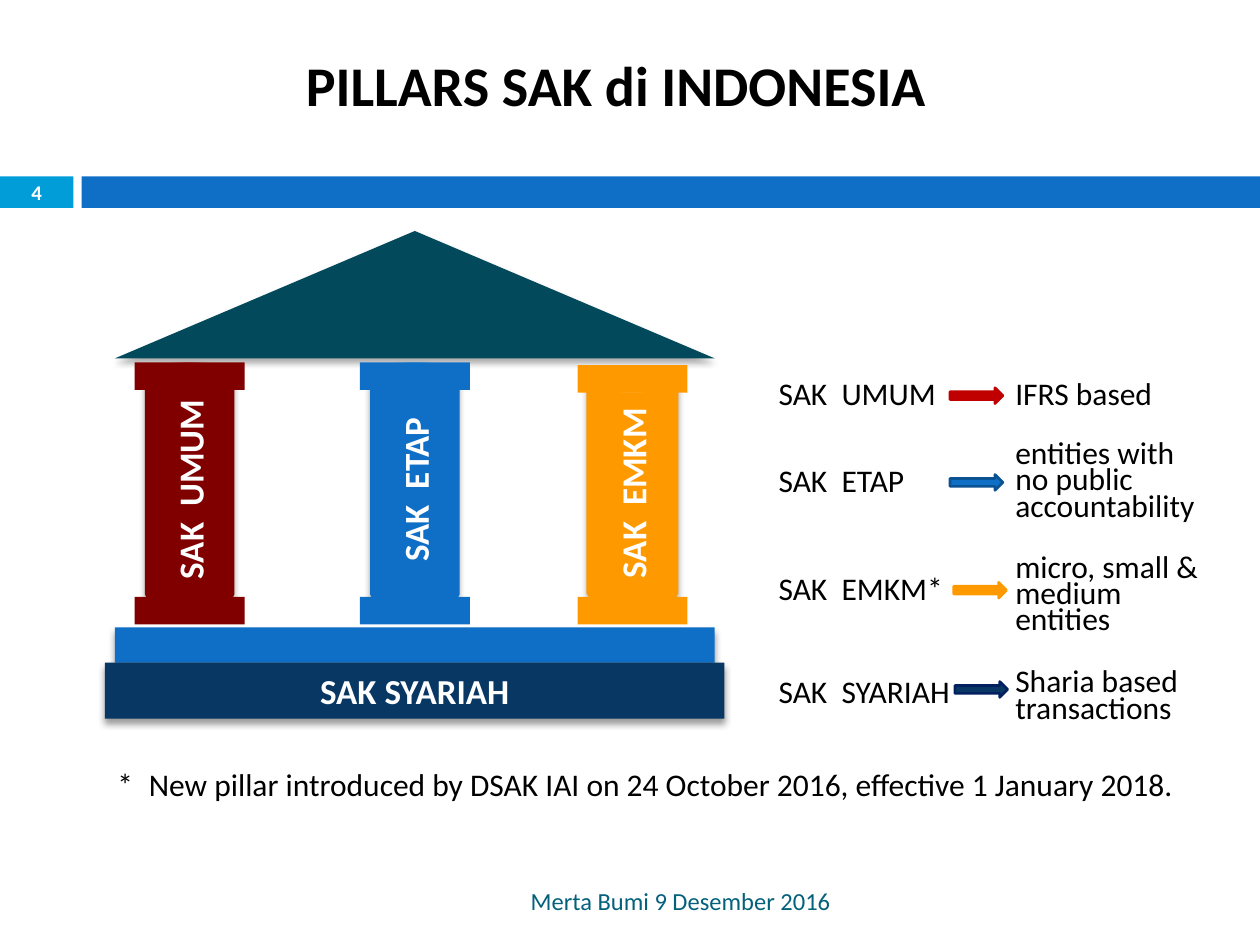
from lxml import etree
from pptx import Presentation
from pptx.dml.color import RGBColor
from pptx.enum.shapes import MSO_SHAPE
from pptx.enum.text import MSO_ANCHOR, PP_ALIGN
from pptx.oxml.ns import qn
from pptx.util import Pt

RECT, ROOF, CAN, ARROW = (MSO_SHAPE.RECTANGLE, MSO_SHAPE.ISOSCELES_TRIANGLE,
                          MSO_SHAPE.CAN, MSO_SHAPE.RIGHT_ARROW)
LEFT, CENTER, RIGHT = PP_ALIGN.LEFT, PP_ALIGN.CENTER, PP_ALIGN.RIGHT
TOP, MIDDLE = MSO_ANCHOR.TOP, MSO_ANCHOR.MIDDLE
BLACK, WHITE, BLUE, NAVY = "000000", "FFFFFF", "0F6FC6", "083763"
MAROON, ORANGE = "800000", "FF9900"
SOFT, DEEP = (32, 3.5, 2.2), (40, 4, 3)
CAP_W, CAP_H, SHAFT_W = 62.8, 15.8, 51.2

# name, left, top, bottom of shaft, colour
PILLARS = [
    ("SAK  UMUM", 77, 207, 346, MAROON),
    ("SAK  ETAP", 205.7, 207, 346, BLUE),
    ("SAK  EMKM", 330, 208.6, 345, ORANGE),
]
# label, label top, meaning, meaning top, arrow left, arrow top, fill, line
LEGEND = [
    ("SAK  UMUM", 210.2, "IFRS based", 210.2, 542.9, 221.6, "C00000", "C00000"),
    ("SAK  ETAP", 260, "entities with  no public accountability", 250.6,
     542.9, 271.2, BLUE, "0B5292"),
    ("SAK  EMKM*", 321.8, "micro, small & medium entities", 315.4,
     545, 332.8, ORANGE, ORANGE),
    ("SAK  SYARIAH", 380.2, "Sharia based transactions", 381,
     545.6, 389.5, NAVY, "002060"),
]


def color(hexa):
    """Turn a hex string into a colour."""
    return RGBColor.from_string(hexa)


def place(shape, box):
    """Set left, top, width and height in points."""
    for name, size in zip(("left", "top", "width", "height"), box):
        setattr(shape, name, Pt(size))


def write(shape, text, size=18, ink=BLACK, bold=False, align=LEFT,
          anchor=TOP, lead=None, wrap=True):
    """Fill a shape with one formatted paragraph."""
    frame = shape.text_frame
    frame.text = text
    para = frame.paragraphs[0]
    font = para.runs[0].font
    formats = [
        (frame, {"word_wrap": wrap, "vertical_anchor": anchor}),
        (para, {"alignment": align, "line_spacing": lead}),
        (font, {"name": "Calibri", "size": Pt(size), "bold": bold}),
    ]
    for item, values in formats:
        for name, value in values.items():
            setattr(item, name, value)
    font.color.rgb = color(ink)
    return para


def shade(shape, alpha, blur, dist):
    """Cast a black shadow straight down."""
    effects = shape.element.spPr.find(qn("a:effectLst"))
    cast = etree.SubElement(effects, qn("a:outerShdw"), blurRad=str(Pt(blur)),
                            dist=str(Pt(dist)), dir="5400000", rotWithShape="0")
    tint = etree.SubElement(cast, qn("a:srgbClr"), val=BLACK)
    etree.SubElement(tint, qn("a:alpha"), val=str(alpha * 1000))


def block(slide, kind, box, fill, line=None, shadow=None):
    """Draw a filled preset shape."""
    shape = slide.shapes.add_shape(kind, *map(Pt, box))
    shape.fill.solid()
    shape.fill.fore_color.rgb = color(fill)
    if line:
        shape.line.color.rgb = color(line)
        shape.line.width = Pt(1.5)
    else:
        shape.line.fill.background()
    shape.shadow.inherit = False
    if shadow:
        shade(shape, *shadow)
    return shape


def label(slide, box, text, **style):
    """Add a text box."""
    return write(slide.shapes.add_textbox(*map(Pt, box)), text, **style)


def pillar(slide, name, left, top, foot, fill):
    """Draw a named shaft with a cap and a base."""
    head = top + 3.8 if fill == ORANGE else top
    line = ORANGE if fill == ORANGE else None
    box = (left + (CAP_W - SHAFT_W) / 2, head, SHAFT_W, foot - head)
    shaft = block(slide, CAN, box, fill, line, SOFT)
    write(shaft, name, size=20, ink=WHITE, bold=True, align=CENTER, anchor=MIDDLE)
    shaft.element.txBody.bodyPr.set("vert", "vert270")
    for edge in (top, 341):
        block(slide, RECT, (left, edge, CAP_W, CAP_H), fill)


def entry(slide, name, name_top, text, text_top, left, top, fill, line):
    """Add a legend row: name, arrow and meaning."""
    label(slide, (437.8, name_top, 113, 29), name, wrap=False)
    block(slide, ARROW, (left, top, 30.2, 9), fill, line)
    lead = Pt(15) if " based" not in text or "Sharia" in text else None
    label(slide, (573.1, text_top, 131.8, 52), text, lead=lead)


def temple(slide):
    """Draw the roof, pillars and steps."""
    block(slide, ROOF, (65.7, 132, 342.7, 72.8), "03495C", shadow=SOFT)
    block(slide, RECT, (65.7, 358.5, 342.7, 20.2), BLUE, shadow=DEEP)
    for row in PILLARS:
        pillar(slide, *row)
    step = block(slide, RECT, (60, 378.7, 354, 32), NAVY, shadow=DEEP)
    write(step, "SAK SYARIAH", size=20, ink=WHITE, bold=True,
          align=CENTER, anchor=MIDDLE)


def main():
    """Build the slide and save it."""
    deck = Presentation()
    deck.slide_width, deck.slide_height = Pt(720), Pt(540)
    slide = deck.slides.add_slide(deck.slide_layouts[5])
    block(slide, RECT, (0, 100.8, 42, 18), "009DD9")
    block(slide, RECT, (46.6, 100.8, 673.4, 18), BLUE)
    title = slide.shapes.title
    place(title, (28, 30, 648, 41))
    write(title, "PILLARS SAK di INDONESIA", size=32, bold=True,
          align=CENTER, anchor=MIDDLE, lead=0.9)
    temple(slide)
    for row in LEGEND:
        entry(slide, *row)
    note = label(slide, (60, 433.4, 627, 29),
                 "*\tNew pillar introduced by DSAK IAI on 24 October 2016, "
                 "effective 1 January 2018.")
    props = note._p.get_or_add_pPr()
    for name, size in {"marL": 18, "indent": -18}.items():
        props.set(name, str(Pt(size)))
    label(slide, (238.3, 500.4, 243.4, 29), "Merta Bumi  9 Desember 2016".replace("  ", " "),
          size=14, ink="04617B", align=RIGHT, anchor=MIDDLE)
    label(slide, (0, 100, 42, 19.6), "4", size=11.9, ink=WHITE, bold=True,
          align=CENTER, anchor=MIDDLE)
    deck.save("out.pptx")


if __name__ == "__main__":
    main()
